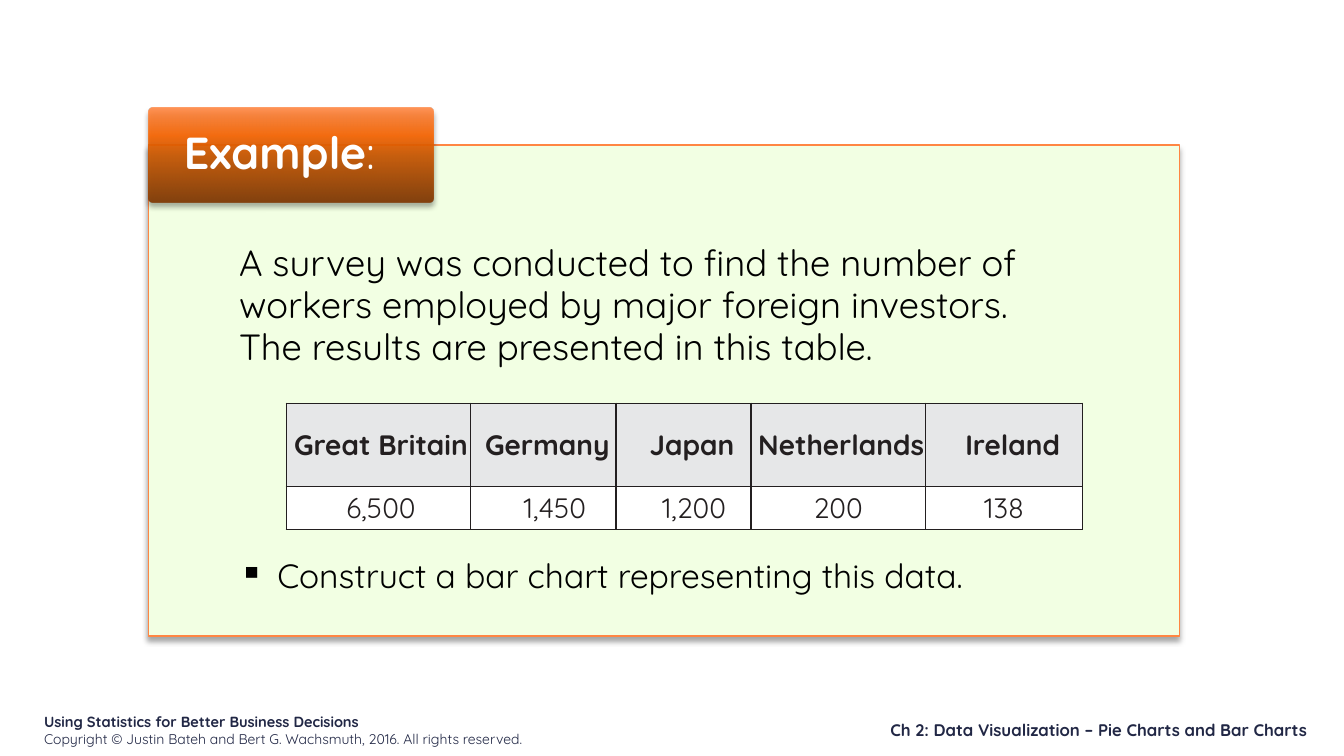
from lxml import etree
from pptx import Presentation, util as u
from pptx.dml.color import RGBColor
from pptx.enum import shapes, text
from pptx.oxml import parse_xml
from pptx.oxml.ns import nsdecls, qn

NAVY = RGBColor(0x21, 0x27, 0x45)
BLACK = RGBColor(0, 0, 0)
WHITE = RGBColor(255, 255, 255)
INK = RGBColor(0x23, 0x1F, 0x20)
GREY = RGBColor(0xE6, 0xE7, 0xE8)
MINT = RGBColor(0xF2, 0xFF, 0xE3)
ORANGE = RGBColor(0xFF, 0x86, 0x43)

prs = Presentation()
prs.slide_width, prs.slide_height = u.Inches(13.33), u.Inches(7.5)
s = prs.slides.add_slide(prs.slide_layouts[6])


def place(x, y, w, h):
    """Turn percentages of the slide's width and height into lengths."""
    across, down = prs.slide_width / 100, prs.slide_height / 100
    return int(x * across), int(y * down), int(w * across), int(h * down)


def write(p, words, size, color, bold=False, **layout):
    """Add a run to a paragraph and set the paragraph's format values."""
    for name, value in layout.items():
        setattr(p, name, value)
    r = p.add_run()
    r.text = words
    for name, value in dict(name="Quicksand", size=u.Pt(size), bold=bold).items():
        setattr(r.font, name, value)
    r.font.color.rgb = color


# Footer
tf = s.shapes.add_textbox(*place(2.55, 93.6, 39.6, 5.33)).text_frame
tf.word_wrap = True
write(tf.paragraphs[0], "Using Statistics for Better Business Decisions", 10.5, NAVY, True)
write(tf.add_paragraph(), "Copyright © Justin Bateh and Bert G. Wachsmuth, 2016. All rights reserved.",
      10, NAVY, space_after=u.Pt(1))

tf = s.shapes.add_textbox(*place(48.76, 94.53, 49.66, 4)).text_frame
tf.word_wrap = True
tf.vertical_anchor = text.MSO_ANCHOR.BOTTOM
tf.margin_right = u.Inches(0.15)
write(tf.paragraphs[0], "Ch 2: Data Visualization – Pie Charts and Bar Charts", 12, NAVY, True,
      alignment=text.PP_ALIGN.RIGHT)

# Panel and its heading tab
panel = s.shapes.add_shape(shapes.MSO_SHAPE.RECTANGLE, *place(11.03, 19.2, 76.74, 64.93))
panel.fill.solid()
panel.fill.fore_color.rgb = MINT
panel.line.color.rgb = ORANGE
panel.line.width = u.Pt(1)

tab = s.shapes.add_shape(shapes.MSO_SHAPE.ROUNDED_RECTANGLE, *place(11.03, 14.27, 21.23, 12.53))
tab.adjustments[0] = 0.05
tab.line.fill.background()
stops = "".join(
    f'<a:gs pos="{share * 1000}"><a:srgbClr val="{color}"><a:alpha val="90000"/></a:srgbClr></a:gs>'
    for share, color in ((0, "7E3600"), (50, "CC5700"), (70, "F96500"), (100, "FF8947")))
tab._element.spPr.find(qn("a:prstGeom")).addnext(parse_xml(
    f'<a:gradFill {nsdecls("a")} rotWithShape="1"><a:gsLst>{stops}</a:gsLst>'
    '<a:lin ang="16200000" scaled="0"/></a:gradFill>'))

for sp, anchor, insets in (
        (panel, text.MSO_ANCHOR.TOP, (0.9, 0.97, 0.9, 0.22)),
        (tab, text.MSO_ANCHOR.MIDDLE, (0.34, 0.04, 0.34, 0.04))):
    sp.shadow.inherit = False
    sp._element.spPr.find(qn("a:effectLst")).append(parse_xml(
        f'<a:outerShdw {nsdecls("a")} blurRad="{u.Pt(4)}" dist="{u.Pt(3)}" dir="5400000" rotWithShape="0">'
        '<a:srgbClr val="000000"><a:alpha val="35000"/></a:srgbClr></a:outerShdw>'))
    tf = sp.text_frame
    tf.word_wrap = True
    tf.vertical_anchor = anchor
    for side, inset in zip(("left", "top", "right", "bottom"), insets):
        setattr(tf, f"margin_{side}", u.Inches(inset))

body = dict(alignment=text.PP_ALIGN.LEFT, line_spacing=0.96)
tf = panel.text_frame
write(tf.paragraphs[0], "A survey was conducted to find the number of workers employed by "
      "major foreign investors.", 26, BLACK, **body)
write(tf.add_paragraph(), "The results are presented in this table.", 26, BLACK, **body)
p = tf.add_paragraph()
write(p, "Construct a bar chart representing this data.", 24, BLACK, space_before=u.Pt(135), **body)
pPr = p._p.get_or_add_pPr()
pPr.set("marL", str(u.Inches(0.38)))
pPr.set("indent", str(-u.Inches(0.38)))
etree.SubElement(pPr, qn("a:buChar")).set("char", "▪")

p = tab.text_frame.paragraphs[0]
write(p, "Example", 32, WHITE, True, alignment=text.PP_ALIGN.LEFT, line_spacing=0.9)
write(p, ":", 32, WHITE)

# Workers by country: name, workers, column width, indents of the two cells
countries = [
    ("Great Britain", "6,500", 1.83, (0.05, 0.05)),
    ("Germany", "1,450", 1.44, (0.08, 0.23)),
    ("Japan", "1,200", 1.34, (0.17, 0.21)),
    ("Netherlands", "200", 1.73, (0.06, 0)),
    ("Ireland", "138", 1.56, (0.17, 0)),
]
table = s.shapes.add_table(2, len(countries), *place(21.3, 53.33, 59.26, 16.67)).table
for row, height in zip(table.rows, (0.83, 0.42)):
    row.height = u.Inches(height)
for col, (country, workers, width, indents) in enumerate(countries):
    table.columns[col].width = u.Inches(width)
    for row, (words, fill) in enumerate(((country, GREY), (workers, WHITE))):
        cell = table.cell(row, col)
        cell.fill.solid()
        cell.fill.fore_color.rgb = fill
        cell.vertical_anchor = text.MSO_ANCHOR.MIDDLE
        for side in ("left", "top", "right", "bottom"):
            setattr(cell, f"margin_{side}", 0)
        p = cell.text_frame.paragraphs[0]
        write(p, words, 20, INK, row == 0, alignment=text.PP_ALIGN.CENTER, space_before=u.Pt(2))
        p._p.get_or_add_pPr().set("marL", str(u.Inches(indents[row])))
        for i, edge in enumerate("LRTB"):
            cell._tc.get_or_add_tcPr().insert(i, parse_xml(
                f'<a:ln{edge} {nsdecls("a")} w="{u.Pt(1)}"><a:solidFill>'
                f'<a:srgbClr val="{INK}"/></a:solidFill></a:ln{edge}>'))

prs.save("out.pptx")
